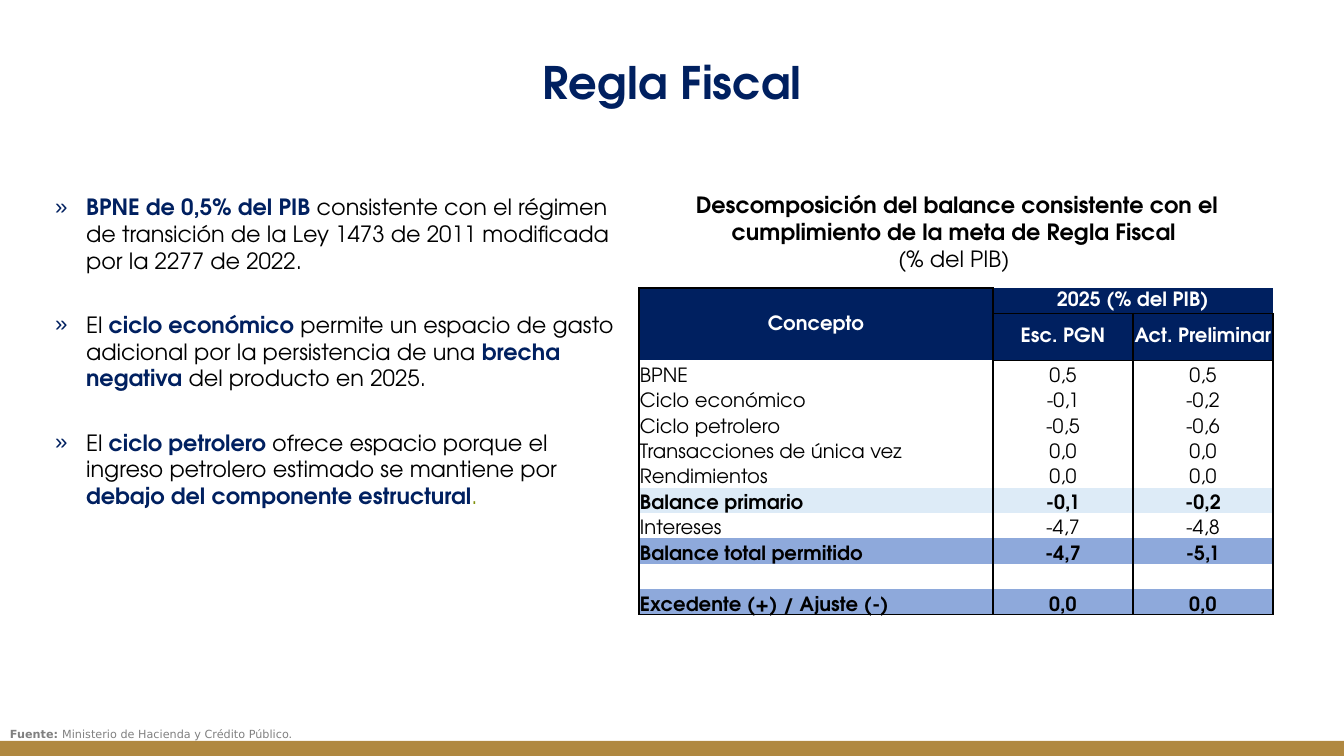
from lxml import etree
from pptx import Presentation, util as u
from pptx.dml.color import RGBColor
from pptx.enum import shapes, text
from pptx.oxml.ns import qn

# Content
FONT, NAVY, BLACK, WHITE = "TeX Gyre Adventor", "002060", "000000", "FFFFFF"
GOLD, GREY, OLIVE = "B08840", "808080", "81910D"
PALE, BLUE = "DDEBF7", "8EA9DB"

TITLE = "Regla Fiscal"
# Each run: text, colour, bold
BULLETS = [
    [("BPNE de 0,5% del PIB ", NAVY, True),
     ("consistente con el régimen de transición de la Ley 1473 de 2011 "
      "modificada por la 2277 de 2022.", BLACK, False)],
    [("El ", BLACK, False), ("ciclo económico ", NAVY, True),
     ("permite un espacio de gasto adicional por la persistencia de una ", BLACK, False),
     ("brecha negativa ", NAVY, True), ("del producto en 2025.", BLACK, False)],
    [("El ", BLACK, False), ("ciclo petrolero ", NAVY, True),
     ("ofrece espacio porque el ingreso petrolero estimado se mantiene por ", BLACK, False),
     ("debajo del componente estructural", NAVY, True), (".", OLIVE, False)],
]
CAPTION = [
    [("Descomposición del balance consistente con el cumplimiento de la meta "
      "de Regla Fiscal ", BLACK, True)],
    [("(% del PIB) ", BLACK, False)],
]
SOURCE = [[("Fuente: ", GREY, True),
           ("Ministerio de Hacienda y Crédito Público.", GREY, False)]]
HEADER_ROWS = 2
TABLE = [
    ("Concepto", "2025 (% del PIB)", ""),
    ("", "Esc. PGN", "Act. Preliminar"),
    ("BPNE", "0,5", "0,5"),
    ("Ciclo económico", "-0,1", "-0,2"),
    ("Ciclo petrolero", "-0,5", "-0,6"),
    ("Transacciones de única vez", "0,0", "0,0"),
    ("Rendimientos", "0,0", "0,0"),
    ("Balance primario", "-0,1", "-0,2"),
    ("Intereses", "-4,7", "-4,8"),
    ("Balance total permitido", "-4,7", "-5,1"),
    ("", "", ""),
    ("Excedente (+) / Ajuste (-)", "0,0", "0,0"),
]
ROW_FILLS = {0: NAVY, 1: NAVY, 7: PALE, 9: BLUE, 11: BLUE}
COL_WIDTHS = (354, 140, 140)
TABLE_LEFT, TABLE_TOP, TABLE_HEIGHT, SUBHEAD_HEIGHT = 639, 288, 327, 47
NO_STYLE = "{2D5ABB26-0587-4C30-8999-92F81FD0307C}"


# Helpers
def px(n):
    return u.Emu(round(n * 914400 / 100.8))


def rgb(value):
    return RGBColor.from_string(value)


def apply(obj, **values):
    for name, value in values.items():
        setattr(obj, name, value)


def place(sp, left, top, width, height):
    apply(sp, left=px(left), top=px(top), width=px(width), height=px(height))


def write(p, runs, size, font=FONT):
    for words, color, bold in runs:
        r = p.add_run()
        r.text = words
        apply(r.font, size=u.Pt(size), name=font, bold=bold)
        r.font.color.rgb = rgb(color)


def fill_frame(tf, paragraphs, size, font=FONT, **formats):
    apply(tf, word_wrap=True, auto_size=text.MSO_AUTO_SIZE.NONE)
    for i, runs in enumerate(paragraphs):
        p = tf.paragraphs[0] if i == 0 else tf.add_paragraph()
        apply(p, **formats)
        write(p, runs, size, font)


def bullet(p):
    pPr = p._p.get_or_add_pPr()
    pPr.set("marL", str(px(31)))
    pPr.set("indent", str(-px(31)))
    clr = etree.SubElement(pPr, qn("a:buClr"))
    etree.SubElement(clr, qn("a:srgbClr"), val=NAVY)
    etree.SubElement(pPr, qn("a:buChar"), char="»")


def borders(cell, sides):
    tcPr = cell._tc.get_or_add_tcPr()
    for side in "LRTB":
        if side in sides:
            ln = etree.SubElement(tcPr, qn("a:ln" + side), w=str(u.Pt(1)))
            fill = etree.SubElement(ln, qn("a:solidFill"))
            etree.SubElement(fill, qn("a:srgbClr"), val=BLACK)


prs = Presentation()
apply(prs, slide_width=px(1344), slide_height=px(756))
s = prs.slides.add_slide(prs.slide_layouts[1])
CENTER = text.PP_ALIGN.CENTER

# Bottom bar
bar = s.shapes.add_shape(shapes.MSO_SHAPE.RECTANGLE, 0, px(741), px(1344), px(15))
bar.shadow.inherit = False
bar.fill.solid()
bar.fill.fore_color.rgb = rgb(GOLD)
bar.line.fill.background()

# Title and bullets
title, body = s.placeholders
place(title, 5, 49, 1335, 65)
fill_frame(title.text_frame, [[(TITLE, NAVY, True)]], 32, alignment=CENTER)
place(body, 45, 188, 594, 332)
fill_frame(body.text_frame, BULLETS, 16, space_before=u.Pt(0), space_after=u.Pt(26.6))
for p in body.text_frame.paragraphs:
    bullet(p)

# Table caption and source
caption = s.shapes.add_textbox(px(621), px(186), px(672), px(92))
fill_frame(caption.text_frame, CAPTION, 16, alignment=CENTER)
source = s.shapes.add_textbox(0, px(715), px(550), px(40))
source.text_frame.vertical_anchor = text.MSO_ANCHOR.MIDDLE
fill_frame(source.text_frame, SOURCE, 8, "DejaVu Sans", line_spacing=0.9)

# Table grid
last_row, last_col = len(TABLE) - 1, len(COL_WIDTHS) - 1
frame = s.shapes.add_table(len(TABLE), len(COL_WIDTHS), px(TABLE_LEFT), px(TABLE_TOP),
                           px(sum(COL_WIDTHS)), px(TABLE_HEIGHT))
table = frame.table
table._tbl.tblPr.find(qn("a:tableStyleId")).text = NO_STYLE
apply(table, first_row=False, horz_banding=False)
for column, width in zip(table.columns, COL_WIDTHS):
    column.width = px(width)
for i, row in enumerate(table.rows):
    row.height = px(SUBHEAD_HEIGHT if i == 1 else (TABLE_HEIGHT - SUBHEAD_HEIGHT) / last_row)
table.cell(0, 0).merge(table.cell(1, 0))
table.cell(0, 1).merge(table.cell(0, 2))

# Table cells
for i, values in enumerate(TABLE):
    header = i < HEADER_ROWS
    for j, value in enumerate(values):
        cell = table.cell(i, j)
        sides = {0: "LR", 1: "L", last_col: "R"}[j]
        if i == 0:
            sides += "B" if j else "T"
        elif i == 1 and j:
            sides += "T"
        elif i == last_row:
            sides += "B"
        borders(cell, sides)
        if i in ROW_FILLS:
            cell.fill.solid()
            cell.fill.fore_color.rgb = rgb(ROW_FILLS[i])
        else:
            cell.fill.background()
        side_margin = px(0 if j == last_col else 1)
        apply(cell, margin_left=side_margin, margin_right=side_margin,
              margin_top=side_margin, margin_bottom=0,
              vertical_anchor=text.MSO_ANCHOR.MIDDLE if header else text.MSO_ANCHOR.BOTTOM)
        p = cell.text_frame.paragraphs[0]
        if header or j:
            p.alignment = CENTER
        if value:
            write(p, [(value, WHITE if header else BLACK, i in ROW_FILLS)], 14)
        else:
            etree.SubElement(p._p, qn("a:endParaRPr"), sz="1400")

prs.save("out.pptx")
